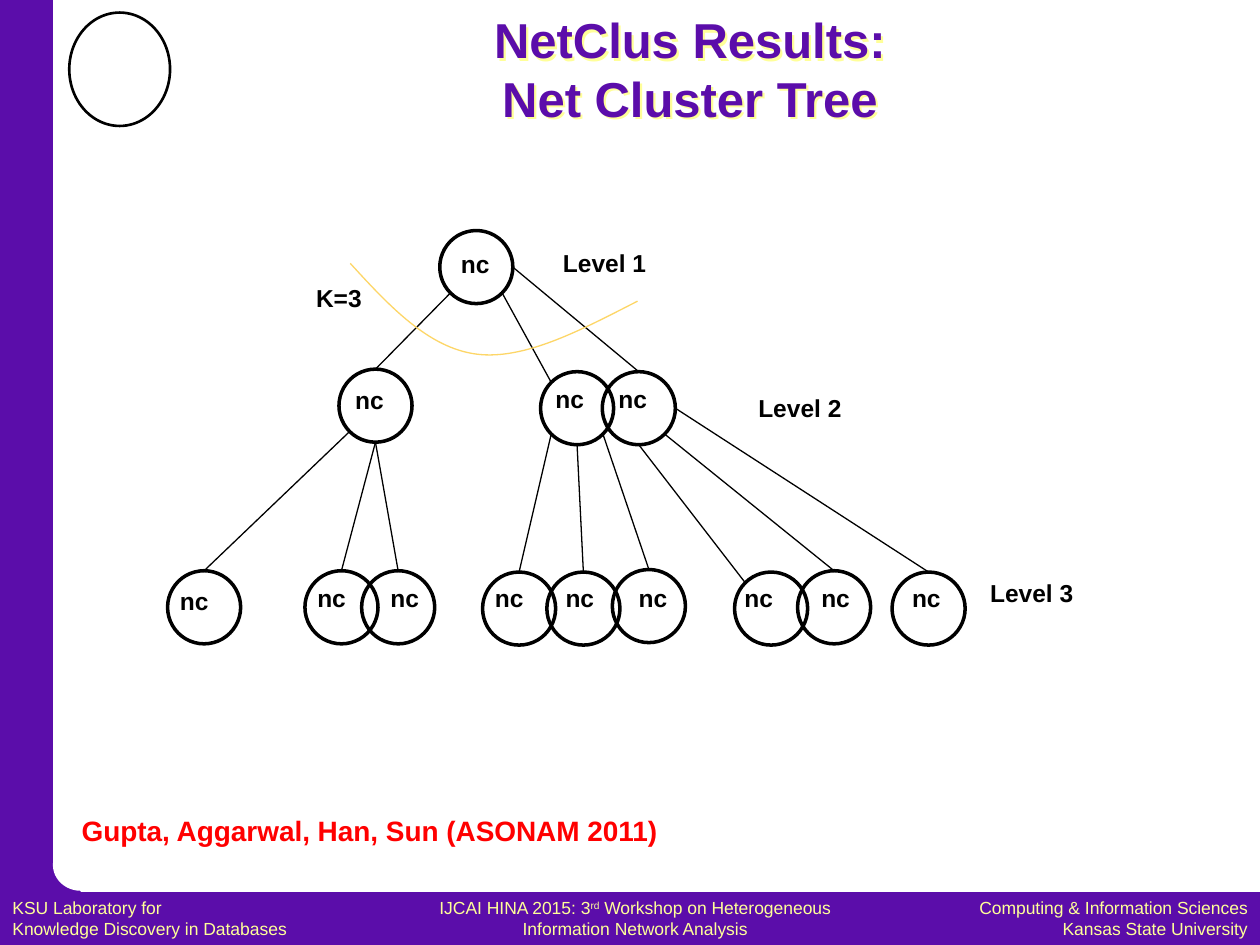
"""Build the NetClus cluster tree slide."""
from math import cos, pi, sin

from lxml import etree
from pptx import Presentation
from pptx import util as u
from pptx.dml.color import RGBColor
from pptx.enum import shapes, text
from pptx.oxml import ns

COLORS = {"purple": "5B0DAA", "cream": "FFFF99", "white": "FFFFFF",
          "black": "000000", "red": "FF0000", "gold": "FDD667"}
COLUMNS = 10
RADIUS = 0.29
LEFT, CENTER, RIGHT = text.PP_ALIGN.LEFT, text.PP_ALIGN.CENTER, text.PP_ALIGN.RIGHT
TOP, TOP_LEFT, BOTTOM_LEFT, BOTTOM, BOTTOM_RIGHT, MIDDLE_RIGHT = 0, 1, 3, 4, 5, 6

# name: centre x, centre y, label left, label top
NODES = {
    "root": (3.78, 2.12, 3.56, 1.93),
    "a": (2.98, 3.22, 2.72, 3.01),
    "b": (4.58, 3.24, 4.31, 3),
    "c": (5.07, 3.24, 4.81, 3),
    "a1": (1.62, 4.82, 1.33, 4.6),
    "a2": (2.71, 4.82, 2.42, 4.58),
    "a3": (3.16, 4.82, 3, 4.58),
    "b1": (4.12, 4.83, 3.83, 4.58),
    "b2": (4.63, 4.83, 4.39, 4.58),
    "b3": (5.15, 4.81, 4.97, 4.58),
    "c1": (6.12, 4.83, 5.81, 4.58),
    "c2": (6.62, 4.82, 6.42, 4.58),
    "c3": (7.37, 4.83, 7.14, 4.58),
}
EDGES = [
    ("root", BOTTOM_LEFT, "a", TOP),
    ("root", BOTTOM_RIGHT, "b", TOP_LEFT),
    ("root", MIDDLE_RIGHT, "c", TOP),
    ("a", BOTTOM_LEFT, "a1", TOP),
    ("a", BOTTOM, "a2", TOP),
    ("a", BOTTOM, "a3", TOP),
    ("b", BOTTOM_LEFT, "b1", TOP),
    ("b", BOTTOM, "b2", TOP),
    ("b", BOTTOM_RIGHT, "b3", TOP),
    ("c", BOTTOM, "c1", TOP_LEFT),
    ("c", BOTTOM_RIGHT, "c2", TOP),
    ("c", MIDDLE_RIGHT, "c3", TOP),
]
LEVELS = [("Level 1", 4.37, 1.92, 2.17), ("Level 2", 5.92, 3.07, 1.84),
          ("Level 3", 7.76, 4.54, 1.74)]
CUT = [(2.78, 2.09), (3.09, 2.43), (3.4, 2.76), (3.78, 2.81),
       (4.16, 2.86), (4.61, 2.62), (5.06, 2.39)]


def site(name, index):
    x, y = NODES[name][:2]
    angle = index * pi / 4
    return x - RADIUS * sin(angle), y - RADIUS * cos(angle)


class Deck:
    """Holds the style and the current slide, and draws on a square grid."""

    def __init__(self, prs, font="Arial"):
        self.cell = prs.slide_width / COLUMNS
        self.font = font
        self.s = prs.slides.add_slide(prs.slide_layouts[5])

    def grid(self, *cells):
        return [round(c * self.cell) for c in cells]

    def color(self, name):
        return RGBColor.from_string(COLORS[name])

    def style(self, p, size, color, bold, align):
        p.alignment = align
        p.font.name, p.font.size, p.font.bold = self.font, u.Pt(size), bold
        p.font.color.rgb = self.color(color)

    def title(self, words, box):
        sp = self.s.shapes.title
        sp.left, sp.top, sp.width, sp.height = self.grid(*box)
        tf = sp.text_frame
        tf.text = words
        tf.auto_size = text.MSO_AUTO_SIZE.NONE
        tf.vertical_anchor = text.MSO_ANCHOR.MIDDLE
        self.style(tf.paragraphs[0], 28, "purple", True, CENTER)
        effects = etree.SubElement(sp._element.spPr, ns.qn("a:effectLst"))
        shadow = etree.SubElement(effects, ns.qn("a:outerShdw"),
                                  dist="22860", dir="2700000", algn="ctr")
        etree.SubElement(shadow, ns.qn("a:srgbClr"), val=COLORS["cream"])

    def shape(self, kind, box, fill=None, line=None, width=2):
        sp = self.s.shapes.add_shape(kind, *self.grid(*box))
        sp.shadow.inherit = False
        if fill:
            sp.fill.solid()
            sp.fill.fore_color.rgb = self.color(fill)
        else:
            sp.fill.background()
        if line:
            sp.line.color.rgb = self.color(line)
            sp.line.width = u.Pt(width)
        else:
            sp.line.fill.background()

    def label(self, lines, box, size=14, color="black", bold=True, align=LEFT, wrap=True):
        tf = self.s.shapes.add_textbox(*self.grid(*box)).text_frame
        tf.word_wrap = wrap
        for i, words in enumerate(lines):
            p = tf.add_paragraph() if i else tf.paragraphs[0]
            self.style(p, size, color, bold, align)
            for j, part in enumerate(words.split("^")):
                r = p.add_run()
                r.text = part
                if j % 2:
                    r._r.get_or_add_rPr().set("baseline", "30000")

    def line(self, start, end):
        sp = self.s.shapes.add_connector(
            shapes.MSO_CONNECTOR.STRAIGHT, *self.grid(*start, *end))
        sp.line.color.rgb = self.color("black")
        sp.line.width = u.Pt(0.75)
        etree.SubElement(sp._element.spPr, ns.qn("a:effectLst"))

    def curve(self, points, color):
        pts = [tuple(self.grid(*point)) for point in points]
        fb = self.s.shapes.build_freeform(*pts[0])
        fb.add_line_segments(pts[3::3], close=False)
        sp = fb.convert_to_shape()
        sp.shadow.inherit = False
        sp.fill.background()
        sp.line.color.rgb = self.color(color)
        sp.line.width = u.Pt(0.75)
        for i, segment in enumerate(sp._element.findall(".//" + ns.qn("a:lnTo"))):
            bezier = etree.Element(ns.qn("a:cubicBezTo"))
            for x, y in pts[3 * i + 1:3 * i + 4]:
                etree.SubElement(bezier, ns.qn("a:pt"),
                                 x=str(x - sp.left), y=str(y - sp.top))
            segment.getparent().replace(segment, bezier)


def main():
    prs = Presentation()
    prs.slide_width, prs.slide_height = u.Inches(10), u.Inches(7.5)
    d = Deck(prs)
    rect, oval = shapes.MSO_SHAPE.RECTANGLE, shapes.MSO_SHAPE.OVAL

    for box in [(0, 7.08, 10, 0.42), (0, 0, 0.42, 7.5), (0.2, 6.85, 0.44, 0.44)]:
        d.shape(rect, box, "purple")
    d.shape(oval, (0.42, 6.66, 0.44, 0.41), "white")
    d.shape(oval, (0.55, 0.1, 0.8, 0.9), "white", "black", 1.5)

    footers = [
        (["KSU Laboratory for", "Knowledge Discovery in Databases"], 0, 2.92, LEFT),
        (["IJCAI HINA 2015: 3^rd^ Workshop on Heterogeneous Information Network Analysis"],
         3.08, 3.92, CENTER),
        (["Computing & Information Sciences", "Kansas State University"], 7.18, 2.82, RIGHT),
    ]
    for lines, x, width, align in footers:
        d.label(lines, (x, 7.07, width, 0.4), 10, "cream", False, align)

    d.title("NetClus Results:\vNet Cluster Tree", (1.33, 0.17, 8.29, 0.75))
    d.label(["Gupta, Aggarwal, Han, Sun (ASONAM 2011)"], (0.55, 6.41, 4.9, 0.38), 16, "red")

    for x, y, _, _ in NODES.values():
        d.shape(oval, (x - RADIUS, y - RADIUS, 2 * RADIUS, 2 * RADIUS), line="black")
    for parent, start, child, end in EDGES:
        d.line(site(parent, start), site(child, end))
    for words, x, y, width in LEVELS:
        d.label([words], (x, y, width, 0.4))
    d.curve(CUT, "gold")
    d.label(["K=3"], (2.41, 2.2, 0.59, 0.4), wrap=False)
    for _, _, x, y in NODES.values():
        d.label(["nc"], (x, y, 0.44, 0.4), wrap=False)
    prs.save("out.pptx")


if __name__ == "__main__":
    main()
